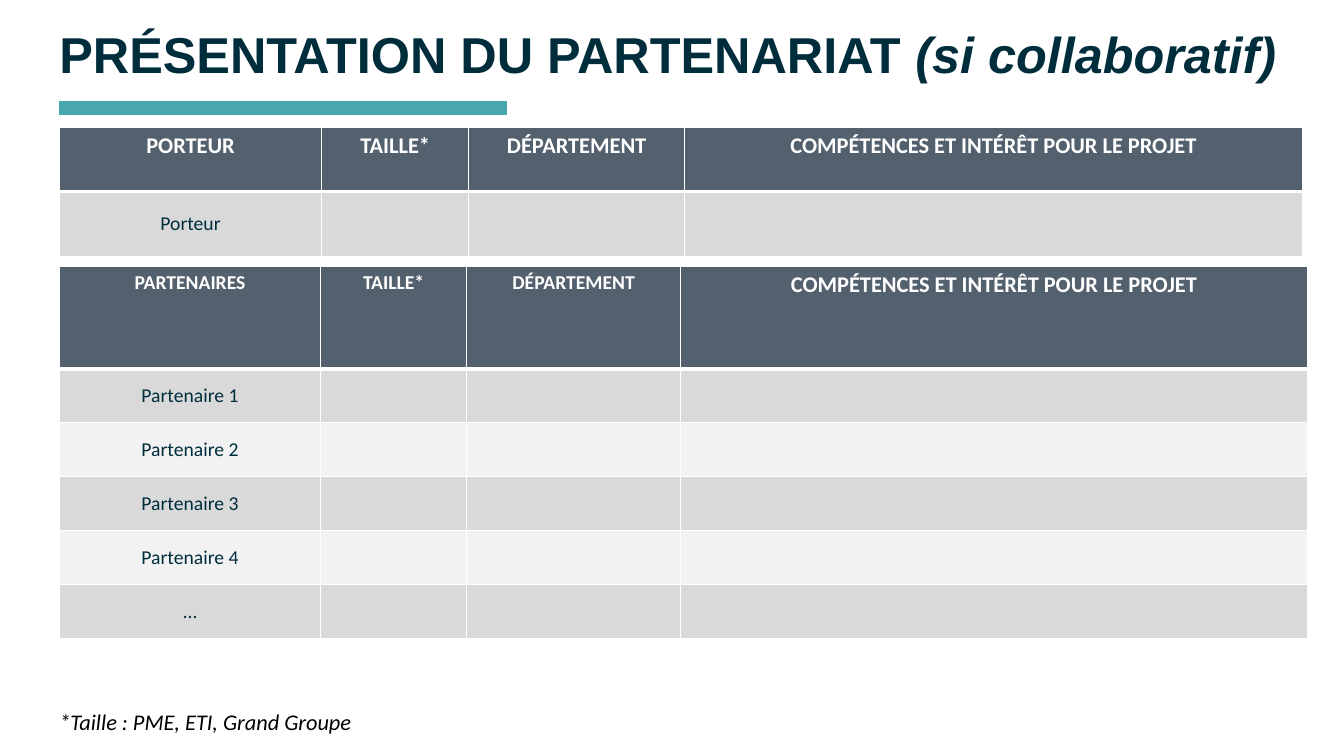
from lxml.etree import SubElement
from pptx import Presentation
from pptx.dml.color import RGBColor
from pptx.enum.shapes import MSO_CONNECTOR
from pptx.enum.text import MSO_ANCHOR, PP_ALIGN
from pptx.oxml.ns import qn
from pptx.util import Inches, Pt

WHITE = RGBColor(0xFF, 0xFF, 0xFF)
BLACK = RGBColor(0x00, 0x00, 0x00)
NAVY = RGBColor(0x00, 0x2D, 0x3C)
TEAL = RGBColor(0x49, 0xA8, 0xAE)
SLATE = RGBColor(0x53, 0x60, 0x6E)
BAND_COLORS = (RGBColor(0xD9, 0xD9, 0xD9), RGBColor(0xF2, 0xF2, 0xF2))

SLIDE_WIDTH, SLIDE_HEIGHT = 13.33, 7.5
MARGIN = 0.59
TEXT_LEFT = MARGIN - 0.1
HEADINGS = ("TAILLE*", "DÉPARTEMENT", "COMPÉTENCES ET INTÉRÊT POUR LE PROJET")


def add_run(paragraph, text, size, color, font="Calibri", bold=False, italic=False):
    run = paragraph.add_run()
    run.text = text
    run.font.name = font
    run.font.size = Pt(size)
    run.font.color.rgb = color
    run.font.bold = bold
    run.font.italic = italic


def add_text_box(slide, left, top, width, height, wrap=True):
    """Add a middle-anchored box and return its first paragraph."""
    box = slide.shapes.add_textbox(*map(Inches, (left, top, width, height)))
    box.text_frame.word_wrap = wrap
    box.text_frame.vertical_anchor = MSO_ANCHOR.MIDDLE
    return box.text_frame.paragraphs[0]


def set_borders(cell, bottom_width):
    """Draw white borders; must run before the cell's fill is set."""
    properties = cell._tc.get_or_add_tcPr()
    for side, width in (("L", 1), ("R", 1), ("T", 1), ("B", bottom_width)):
        line = SubElement(properties, qn(f"a:ln{side}"), w=str(Pt(width)))
        fill = SubElement(line, qn("a:solidFill"))
        SubElement(fill, qn("a:srgbClr"), val=str(WHITE))


def format_cell(cell, text, fill, size, color, bold, anchor, bottom_width):
    set_borders(cell, bottom_width)
    cell.fill.solid()
    cell.fill.fore_color.rgb = fill
    cell.vertical_anchor = anchor
    paragraph = cell.text_frame.paragraphs[0]
    paragraph.alignment = PP_ALIGN.CENTER
    if text:
        add_run(paragraph, text, size, color, bold=bold)


def add_title(slide, left, top, width, height):
    paragraph = add_text_box(slide, left, top, width, height)
    paragraph.line_spacing = 0.9
    add_run(paragraph, "PRÉSENTATION DU PARTENARIAT ", 36, NAVY, "Arial", bold=True)
    add_run(paragraph, "(si collaboratif)", 36, NAVY, "Arial", bold=True, italic=True)


def add_title_rule(slide, left, top, width):
    rule = slide.shapes.add_connector(
        MSO_CONNECTOR.STRAIGHT, *map(Inches, (left, top, left + width, top)))
    rule.line.color.rgb = TEAL
    rule.line.width = Pt(10)
    SubElement(rule._element.spPr, qn("a:effectLst"))


def add_partner_table(slide, left, top, columns, header_height, row_height,
                      heading, names, heading_sizes):
    """Add a header row, then one banded row per name."""
    heights = [header_height] + [row_height] * len(names)
    table = slide.shapes.add_table(
        len(heights), len(columns),
        *map(Inches, (left, top, sum(columns), sum(heights)))).table
    for column, width in zip(table.columns, columns):
        column.width = Inches(width)
    for row, height in zip(table.rows, heights):
        row.height = Inches(height)

    for index, text in enumerate((heading, *HEADINGS)):
        format_cell(table.cell(0, index), text, SLATE, heading_sizes[index],
                    WHITE, True, MSO_ANCHOR.TOP, 3)
    for row_index, name in enumerate(names, start=1):
        band = BAND_COLORS[(row_index - 1) % 2]
        for index in range(len(columns)):
            format_cell(table.cell(row_index, index), "" if index else name, band,
                        14, NAVY, False, MSO_ANCHOR.MIDDLE, 1)


def add_footnote(slide, left, top, width, height):
    paragraph = add_text_box(slide, left, top, width, height, wrap=False)
    add_run(paragraph, "*Taille : PME, ETI, Grand Groupe", 16, BLACK, italic=True)


def main():
    presentation = Presentation()
    presentation.slide_width = Inches(SLIDE_WIDTH)
    presentation.slide_height = Inches(SLIDE_HEIGHT)
    slide = presentation.slides.add_slide(presentation.slide_layouts[6])

    add_title_rule(slide, MARGIN, 1.07, SLIDE_WIDTH / 3)
    add_title(slide, TEXT_LEFT, 0.3, 12.43, 0.54)
    partners = [f"Partenaire {number}" for number in range(1, 5)] + ["…"]
    add_partner_table(slide, MARGIN, 2.64, (2.59, 1.45, 2.12, 6.22), 1.02, 0.535,
                      "PARTENAIRES", partners, (14, 14, 14, 16))
    add_partner_table(slide, MARGIN, 1.26, (2.6, 1.46, 2.14, 6.13), 0.64, 0.65,
                      "PORTEUR", ["Porteur"], (16, 16, 16, 16))
    add_footnote(slide, TEXT_LEFT, 6.97, 3.1, 0.37)
    presentation.save("out.pptx")


if __name__ == "__main__":
    main()
